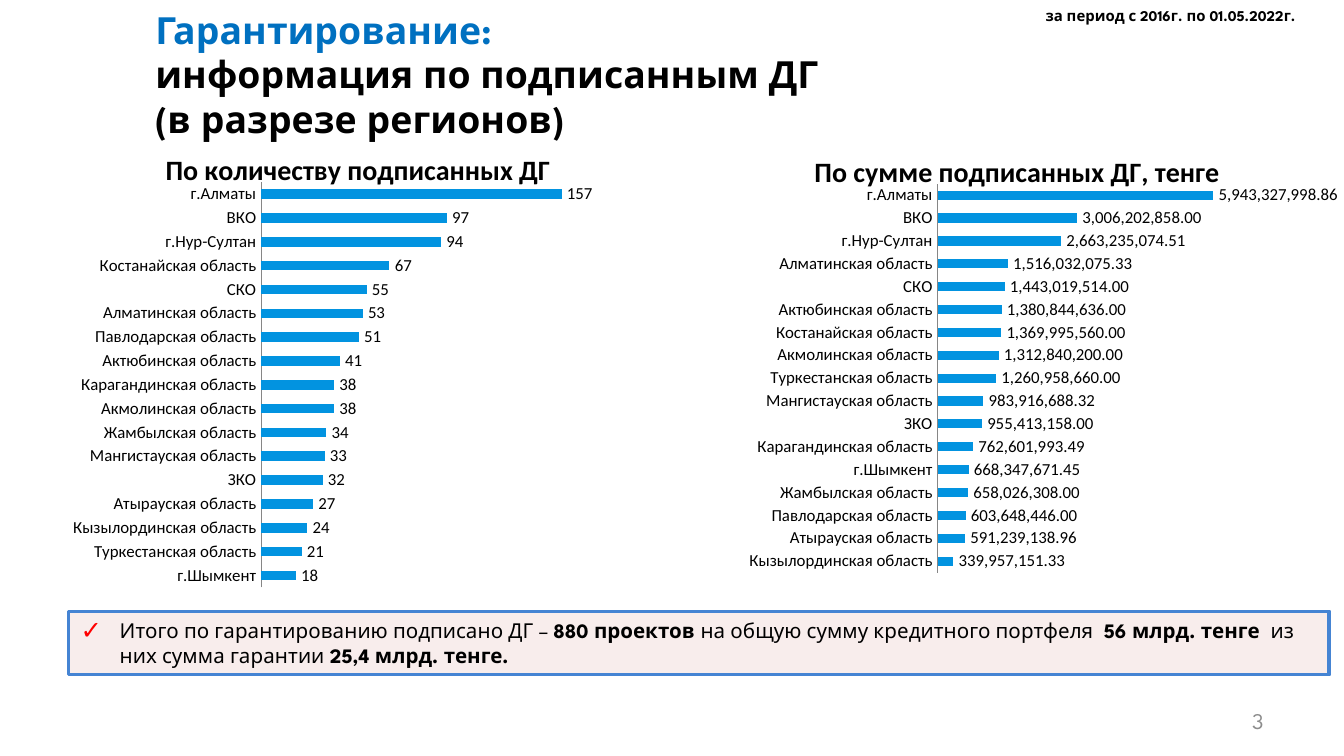
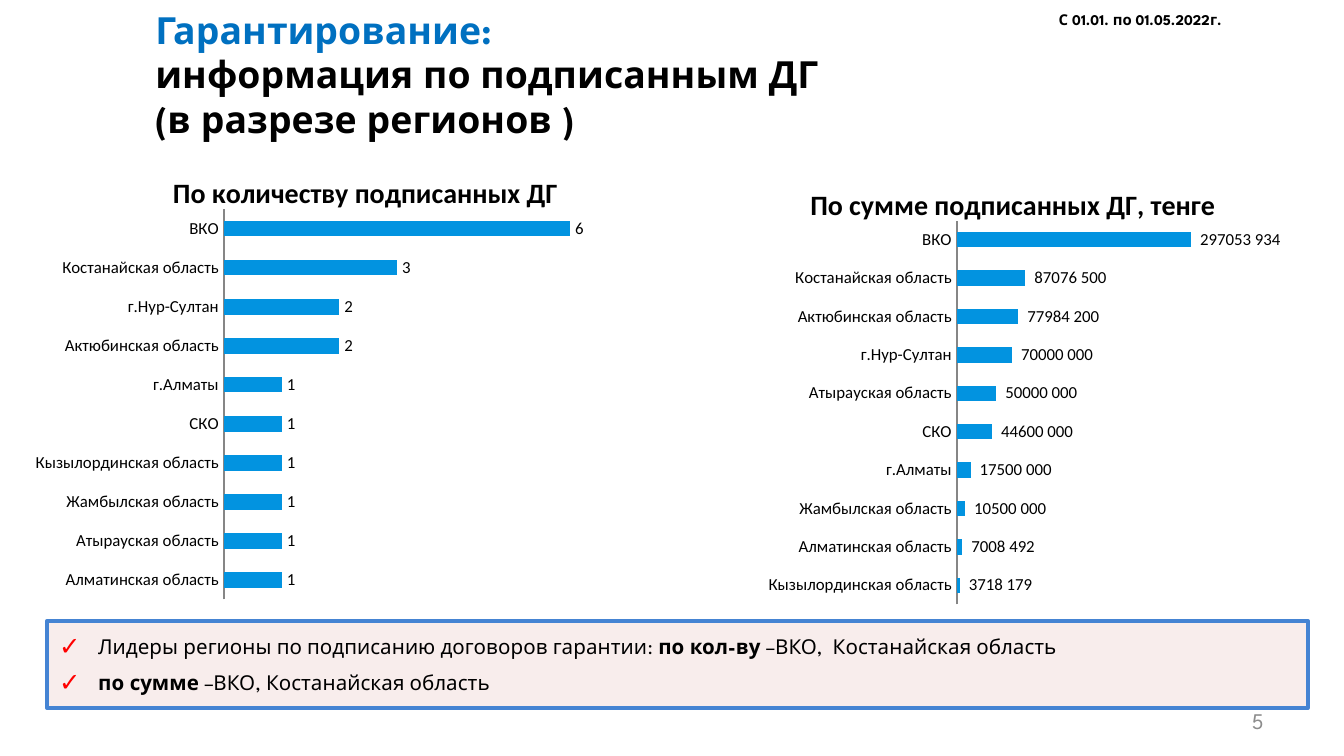
from lxml.etree import SubElement
from pptx import Presentation
from pptx.chart.data import CategoryChartData
from pptx.dml.color import RGBColor
from pptx.enum.chart import XL_CHART_TYPE, XL_LABEL_POSITION, XL_TICK_MARK
from pptx.enum.text import MSO_ANCHOR, MSO_AUTO_SIZE, PP_ALIGN
from pptx.oxml.ns import qn
from pptx.util import Pt

BAR = XL_CHART_TYPE.BAR_CLUSTERED
OUTSIDE = XL_LABEL_POSITION.OUTSIDE_END
NO_TICK = XL_TICK_MARK.NONE
TOP, MIDDLE = MSO_ANCHOR.TOP, MSO_ANCHOR.MIDDLE
FIXED, GROW = MSO_AUTO_SIZE.NONE, MSO_AUTO_SIZE.SHAPE_TO_FIT_TEXT
LEFT, RIGHT = PP_ALIGN.LEFT, PP_ALIGN.RIGHT

HEAD, BODY = "League Spartan", "Calibri"
BLACK, BLUE, GREY, RED = "000000", "0070C0", "8C8C8C", "FF0000"
BARS, AXIS, PINK, EDGE = "0293E0", "868686", "F2DCDB", "4584D3"

COUNT = "По количеству подписанных ДГ"
TOTAL = "По сумме подписанных ДГ, тенге"
CENTS = "#,##0.00"
TENGE = r'_-* #\ ##0_р_._-;\-* #\ ##0_р_._-;_-* "-"'


def color(code):
    return RGBColor.from_string(code)


def put(target, **values):
    """Set every named attribute on the target."""
    for name, value in values.items():
        setattr(target, name, value)


def place(shape, box):
    put(shape, **dict(zip(("left", "top", "width", "height"), map(Pt, box))))


def style(font, name, size, code=BLACK, bold=False):
    put(font, name=name, size=Pt(size), bold=bold)
    font.color.rgb = color(code)


def region(name):
    return f"{name} область" if name.endswith("ая") else name


def pin(part, index, spot, **extra):
    """Fix a chart part at a spot given in percent of the chart."""
    for old in part.findall(qn("c:layout")):
        part.remove(old)
    outer = SubElement(part, qn("c:layout"))
    part.insert(index, outer)
    inner = SubElement(outer, qn("c:manualLayout"))
    values = {**extra, "xMode": "edge", "yMode": "edge"}
    values.update(zip("xywh", (share / 100 for share in spot)))
    for tag, value in values.items():
        SubElement(inner, qn(f"c:{tag}"), val=str(value))


class Deck:
    def __init__(self):
        self.file = Presentation()
        put(self.file, slide_width=Pt(720), slide_height=Pt(405))
        self.slide = None

    def start(self):
        self.slide = self.file.slides.add_slide(self.file.slide_layouts[1])

    def run(self, para, text, size, code=BLACK, bold=False):
        run = para.add_run()
        run.text = text
        style(run.font, HEAD, size, code, bold)

    def title(self, box, last):
        shape = self.slide.shapes.title
        place(shape, box)
        frame = shape.text_frame
        put(frame, auto_size=FIXED, vertical_anchor=TOP, word_wrap=True)
        first, second = frame.paragraphs[0], frame.add_paragraph()
        for para in (first, second):
            put(para, alignment=LEFT, line_spacing=1.0)
        self.run(first, "Гарантирование: ", 20, BLUE, True)
        first.add_line_break()
        self.run(first, "информация по подписанным ДГ", 20, bold=True)
        self.run(second, last, 20, bold=True)

    def label(self, box, text, size, code=BLACK, bold=False, align=LEFT, **frame):
        shape = self.slide.shapes.add_textbox(*map(Pt, box))
        put(shape.text_frame, **frame)
        para = shape.text_frame.paragraphs[0]
        para.alignment = align
        self.run(para, text, size, code, bold)

    def period(self, box, text):
        self.label(box, text, 8, bold=True, auto_size=GROW, word_wrap=False)

    def number(self, text):
        self.label((516, 375, 168, 22), text, 12, GREY, align=RIGHT,
                   vertical_anchor=MIDDLE, word_wrap=True)

    def check(self, para):
        """Give the paragraph a red tick as its bullet."""
        props = para._p.get_or_add_pPr()
        props.set("marL", str(Pt(21.6)))
        props.set("indent", str(-Pt(20.9)))
        tint = SubElement(props, qn("a:buClr"))
        SubElement(tint, qn("a:srgbClr"), val=RED)
        SubElement(props, qn("a:buSzPct"), val="125000")
        SubElement(props, qn("a:buChar"), char="✓")

    def note(self, box, lines):
        """Fill the framed list; every second part of a line is bold."""
        shape = self.slide.placeholders[1]
        place(shape, box)
        shape.fill.solid()
        shape.fill.fore_color.rgb = color(PINK)
        tint = shape._element.spPr.find(qn("a:solidFill"))[0]
        SubElement(tint, qn("a:alpha"), val="50000")
        shape.line.color.rgb = color(EDGE)
        shape.line.width = Pt(2)
        frame = shape.text_frame
        put(frame, auto_size=FIXED, vertical_anchor=MIDDLE, word_wrap=True,
            margin_left=Pt(5.8), margin_right=Pt(5.8),
            margin_top=Pt(2.9), margin_bottom=Pt(2.9))
        for row, parts in enumerate(lines):
            para = frame.add_paragraph() if row else frame.paragraphs[0]
            put(para, alignment=LEFT, line_spacing=1.0,
                space_before=Pt(0), space_after=Pt(6))
            self.check(para)
            for spot, text in enumerate(parts):
                if text:
                    self.run(para, text, 11, bold=spot % 2 == 1)

    def bars(self, box, title, spot, plot, rows, form="General"):
        """Draw horizontal bars, with the first row on top."""
        data = CategoryChartData()
        data.categories = [region(name) for name in reversed(rows)]
        data.add_series("Series 1", list(reversed(rows.values())))
        chart = self.slide.shapes.add_chart(BAR, *map(Pt, box), data).chart
        style(chart.font, BODY, 10)
        put(chart, has_legend=False, has_title=True)
        frame = chart.chart_title.text_frame
        frame.text = title
        style(frame.paragraphs[0].runs[0].font, BODY, 15, bold=True)
        pin(chart.chart_title._element, 1, spot)
        pin(chart._chartSpace.chart.plotArea, 0, plot, layoutTarget="inner")

        put(chart.value_axis, visible=False, has_major_gridlines=False,
            minimum_scale=0)
        axis = chart.category_axis
        put(axis, major_tick_mark=NO_TICK, minor_tick_mark=NO_TICK)
        axis.format.line.color.rgb = color(AXIS)
        style(axis.tick_labels.font, BODY, 9)

        group = chart.plots[0]
        put(group, gap_width=150, vary_by_categories=False, has_data_labels=True)
        fill = group.series[0].format.fill
        fill.solid()
        fill.fore_color.rgb = color(BARS)
        tags = group.data_labels
        put(tags, show_value=True, position=OUTSIDE, number_format=form,
            number_format_is_linked=False)
        style(tags.font, BODY, 9)


def whole(deck):
    """Regions over the whole period since 2016."""
    deck.start()
    deck.title((76, 0, 541, 46), "(в разрезе регионов)")
    deck.number("3")
    deck.period((553, 0, 150.5, 17), "за период с 2016г. по 01.05.2022г.")
    deck.note((36.7, 327.6, 675.4, 33.8), [
        ["Итого по гарантированию подписано ДГ – ", "880 проектов ",
         "на общую сумму кредитного портфеля  ", "56 млрд. тенге  ",
         "из них сумма гарантии ", "25,4 млрд. тенге."]])
    deck.bars((-2, 70, 386, 259), COUNT, (22.8, 3), (36.8, 10.7, 47.8, 83.8), {
        "г.Алматы": 157, "ВКО": 97, "г.Нур-Султан": 94, "Костанайская": 67,
        "СКО": 55, "Алматинская": 53, "Павлодарская": 51, "Актюбинская": 41,
        "Карагандинская": 38, "Акмолинская": 38, "Жамбылская": 34,
        "Мангистауская": 33, "ЗКО": 32, "Атырауская": 27,
        "Кызылординская": 24, "Туркестанская": 21, "г.Шымкент": 18})
    deck.bars((362, 74, 358, 255), TOTAL, (20, 2), (39.2, 9.6, 48.6, 81.7), {
        "г.Алматы": 5943327998.86, "ВКО": 3006202858,
        "г.Нур-Султан": 2663235074.51, "Алматинская": 1516032075.33,
        "СКО": 1443019514, "Актюбинская": 1380844636,
        "Костанайская": 1369995560, "Акмолинская": 1312840200,
        "Туркестанская": 1260958660, "Мангистауская": 983916688.32,
        "ЗКО": 955413158, "Карагандинская": 762601993.49,
        "г.Шымкент": 668347671.45, "Жамбылская": 658026308,
        "Павлодарская": 603648446, "Атырауская": 591239138.96,
        "Кызылординская": 339957151.33}, CENTS)


def recent(deck):
    """Regions over the first months of 2022."""
    deck.start()
    deck.title((76, 0, 505, 64), "(в разрезе регионов )")
    deck.number("5")
    deck.period((560, 2, 106.5, 17), "С 01.01. по 01.05.2022г.")
    deck.note((25.2, 332.6, 675.4, 46.8), [
        ["Лидеры регионы по подписанию договоров гарантии: ", "по кол-ву ",
         "–ВКО,  Костанайская область"],
        ["", "по сумме ", "–ВКО, Костанайская область"]])
    deck.bars((0, 80, 389.5, 250.5), COUNT, (23.1, 4), (30.8, 12.8, 55.5, 83.5), {
        "ВКО": 6, "Костанайская": 3, "г.Нур-Султан": 2, "Актюбинская": 2,
        "г.Алматы": 1, "СКО": 1, "Кызылординская": 1, "Жамбылская": 1,
        "Атырауская": 1, "Алматинская": 1})
    deck.bars((371.5, 87, 340, 245.5), TOTAL, (17.6, 4), (41.5, 12.7, 43.5, 83.8), {
        "ВКО": 297053934, "Костанайская": 87076500, "Актюбинская": 77984200,
        "г.Нур-Султан": 70000000, "Атырауская": 50000000, "СКО": 44600000,
        "г.Алматы": 17500000, "Жамбылская": 10500000,
        "Алматинская": 7008492, "Кызылординская": 3718179}, TENGE)


def main():
    deck = Deck()
    whole(deck)
    recent(deck)
    deck.file.save("out.pptx")


if __name__ == "__main__":
    main()
